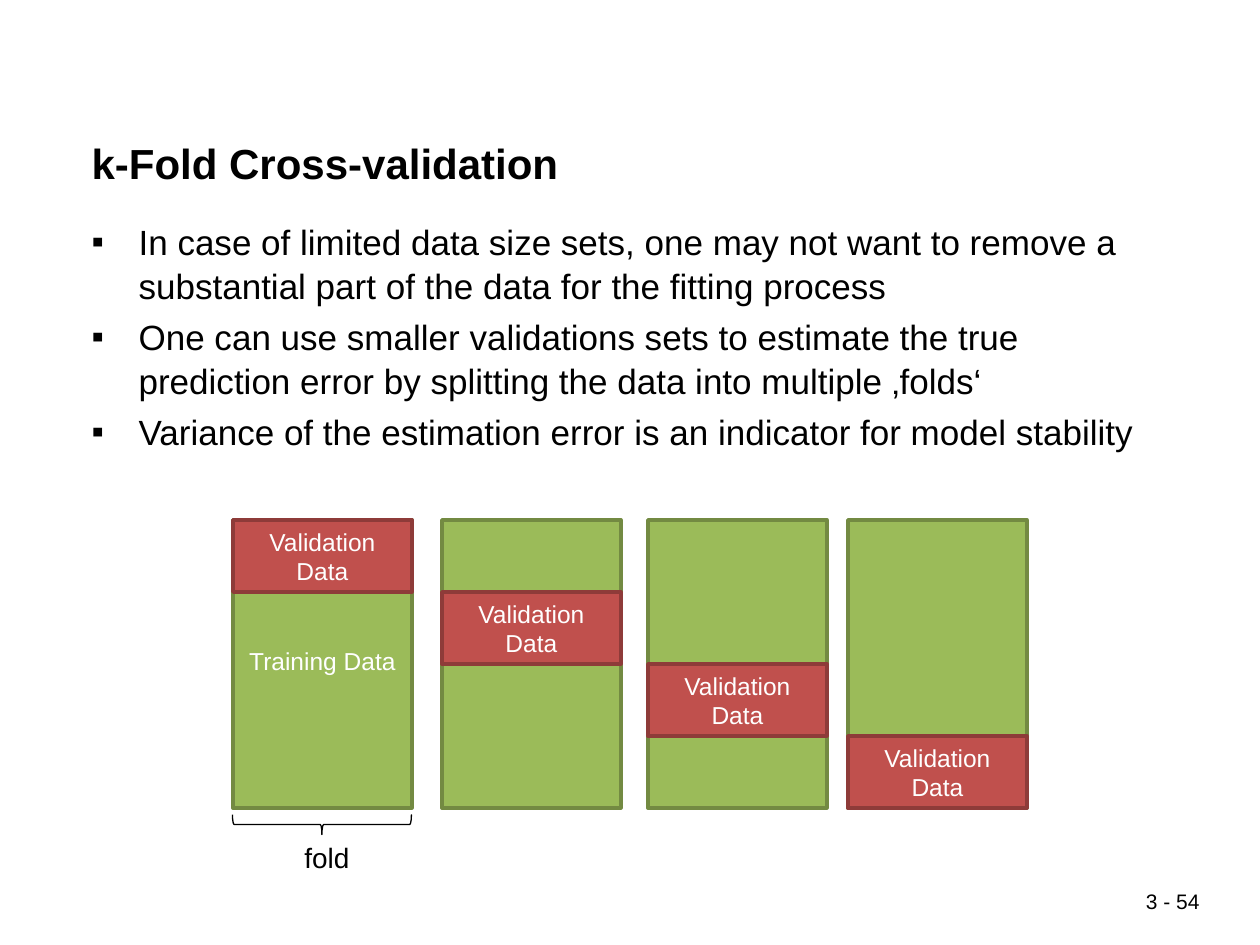
from pptx import Presentation
from pptx import util as u
from pptx.dml.color import RGBColor
from pptx.enum import shapes, text
from pptx.oxml import parse_xml
from pptx.oxml.ns import nsdecls

# Content
TITLE = "k-Fold Cross-validation"
POINTS = [
    "In case of limited data size sets, one may not want to remove a "
    "substantial part of the data for the fitting process",
    "One can use smaller validations sets to estimate the true "
    "prediction error by splitting the data into multiple ‚folds‘",
    "Variance of the estimation error is an indicator for model stability",
]
TRAIN, VALID, FOLD, PAGE = "Training Data", "Validation Data", "fold", "3 - 54"

# Layout in px
LEFTS = [233, 442, 648, 848]
TOP, WIDE, BAND = 520, 179, 72
HIGH = BAND * len(LEFTS)
INDENT = 47


class Theme:
    font = "Arial"
    ink, white = "000000", "FFFFFF"
    train = ("9BBB59", "738A42")
    valid = ("C0504D", "8E3B39")
    head, body, label, cell, foot = 24, 20, 16, 14, 12
    edge, thin = 2, 0.75


def px(n):
    return u.Emu(n * 914400 // 126)


def rgb(code):
    return RGBColor.from_string(code)


def style(frame, size, color=Theme.ink, align=text.PP_ALIGN.LEFT, bold=False):
    for para in frame.paragraphs:
        para.alignment = align
        for run in para.runs:
            font = run.font
            font.name, font.size, font.bold = Theme.font, u.Pt(size), bold
            font.color.rgb = rgb(color)


def place(shape, left, top, width, height):
    shape.left, shape.top = px(left), px(top)
    shape.width, shape.height = px(width), px(height)


def setup(frame, margin):
    frame.auto_size = text.MSO_AUTO_SIZE.NONE
    frame.vertical_anchor = text.MSO_ANCHOR.TOP
    frame.word_wrap = True
    frame.margin_top = px(margin)


def block(slide, left, top, height, colors, label=""):
    fill, line = colors
    box = slide.shapes.add_shape(
        shapes.MSO_SHAPE.RECTANGLE, px(left), px(top), px(WIDE), px(height))
    box.shadow.inherit = False
    box.fill.solid()
    box.fill.fore_color.rgb = rgb(fill)
    box.line.color.rgb = rgb(line)
    box.line.width = u.Pt(Theme.edge)
    if label:
        box.text_frame.text = label
        style(box.text_frame, Theme.cell, Theme.white, text.PP_ALIGN.CENTER)
    return box


def note(slide, words, area, size, align):
    box = slide.shapes.add_textbox(*map(px, area))
    box.text_frame.text = words
    box.text_frame.word_wrap = True
    style(box.text_frame, size, align=align)


def main():
    deck = Presentation()
    deck.slide_width, deck.slide_height = px(1260), px(945)
    slide = deck.slides.add_slide(deck.slide_layouts[1])

    # Title
    title = slide.shapes.title
    place(title, 79, 126, 1111, 84)
    title.text_frame.text = TITLE
    setup(title.text_frame, 11)
    style(title.text_frame, Theme.head, bold=True)

    # Bulleted list
    body = slide.placeholders[1]
    place(body, 79, 210, 1111, 262)
    frame = body.text_frame
    frame.text = "\n".join(POINTS)
    setup(frame, 8)
    for i, para in enumerate(frame.paragraphs):
        props = para._p.get_or_add_pPr()
        props.set("marL", str(px(INDENT)))
        props.set("indent", str(-px(INDENT)))
        props.append(parse_xml(f'<a:buChar {nsdecls("a")} char="▪"/>'))
        para.line_spacing = 1.05
        para.space_before = u.Pt(4 if i else 0)
    style(frame, Theme.body)

    # Folds: the validation band moves down one step per column
    for i, left in enumerate(LEFTS):
        box = block(slide, left, TOP, HIGH, Theme.train, "" if i else TRAIN)
        if not i:
            setup(box.text_frame, 126)
        block(slide, left, TOP + i * BAND, BAND, Theme.valid, VALID)

    # Brace under the first fold, turned to point down
    mid, deep = LEFTS[0] + WIDE // 2, 20
    brace = slide.shapes.add_shape(
        shapes.MSO_SHAPE.LEFT_BRACE, px(mid - deep // 2),
        px(824 - WIDE // 2), px(deep), px(WIDE))
    brace.rotation = 270
    brace.shadow.inherit = False
    brace.fill.background()
    brace.line.color.rgb = rgb(Theme.ink)
    brace.line.width = u.Pt(Theme.thin)

    # Fold label and page number
    note(slide, FOLD, (292, 834, 89, 47), Theme.label, text.PP_ALIGN.LEFT)
    note(slide, PAGE, (1066, 882, 146, 42), Theme.foot, text.PP_ALIGN.RIGHT)

    deck.save("out.pptx")


if __name__ == "__main__":
    main()
